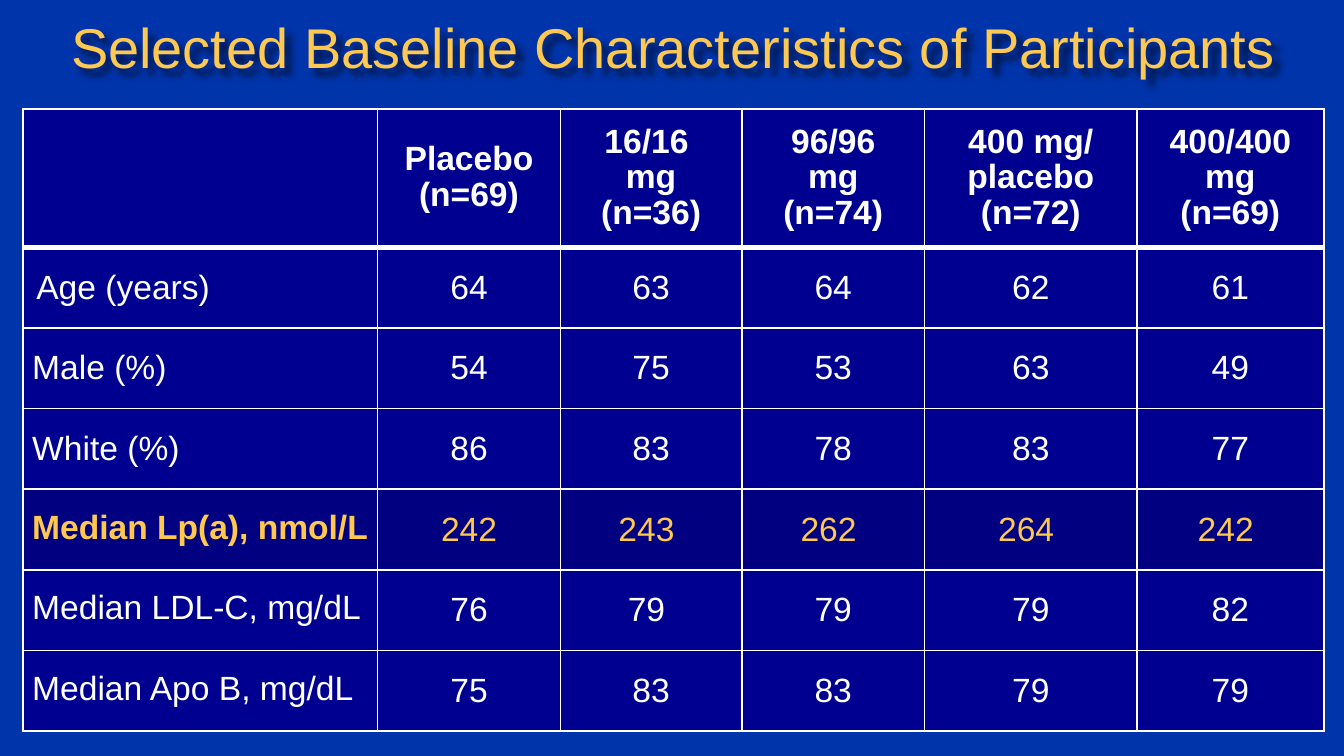
from lxml.etree import SubElement
from pptx import Presentation
from pptx.dml.color import RGBColor
from pptx.enum.text import MSO_ANCHOR as Anchor, PP_ALIGN as Align
from pptx.oxml.ns import qn
from pptx.util import Inches, Pt

COLORS = {
    "background": "0034AA",
    "title": "FFC850",
    "text": "FFFFFF",
    "cell": "000090",
    "highlight": "FFC84F",
    "highlight_cell": "000080",
    "shadow": "000000",
}
FONT = "Arial"
COLUMN_WIDTHS = [2.64, 1.36, 1.35, 1.36, 1.58, 1.39]
HEADER_HEIGHT, ROW_HEIGHT = 1.03, 0.6
HIGHLIGHT_ROW = 4
HEADERS = [
    [],
    ["Placebo", "(n=69)"],
    ["16/16 ", "mg\n(n=36)"],
    ["96/96", "mg\n(n=74)"],
    ["400 mg/\nplacebo\n(n=72)"],
    ["400/400 mg\n(n=69)"],
]
ROWS = [
    ["Age (years)", "64", "63", "64", "62", "61"],
    ["Male (%)", "54", "75", "53", "63", "49"],
    ["White (%)", "86", "83", "78", "83", "77"],
    ["Median Lp(a), nmol/L", "242", "243 ", "262 ", "264 ", "242 "],
    ["Median LDL-C, mg/dL", "76", "79 ", "79", "79", "82"],
    ["Median Apo B, mg/dL", "75", "83", "83", "79", "79"],
]


def add_span(para, text, size, color, bold=False):
    span = para.add_run()
    span.text = text
    span.font.name = FONT
    span.font.size = Pt(size)
    span.font.bold = bold
    span.font.color.rgb = RGBColor.from_string(COLORS[color])


def add_title_shadow(title):
    effects = SubElement(title.element.spPr, qn("a:effectLst"))
    shadow = SubElement(effects, qn("a:outerShdw"), blurRad=str(Pt(4)),
                        dist=str(Pt(4)), dir="2700000", algn="tl", rotWithShape="0")
    color = SubElement(shadow, qn("a:srgbClr"), val=COLORS["shadow"])
    SubElement(color, qn("a:alpha"), val="60000")


def add_title(page, text):
    title = page.shapes.title
    title.left, title.top = Inches(0.01), Inches(0)
    title.width, title.height = Inches(10), Inches(0.69)
    add_title_shadow(title)
    frame = title.text_frame
    frame.vertical_anchor = Anchor.MIDDLE
    frame.word_wrap = True
    para = frame.paragraphs[0]
    para.alignment = Align.CENTER
    add_span(para, text, 30, "title")


def set_borders(cell, widths):
    properties = cell._tc.get_or_add_tcPr()
    for side, width in widths.items():
        line = SubElement(properties, qn(f"a:ln{side}"), w=str(Pt(width)))
        fill = SubElement(line, qn("a:solidFill"))
        SubElement(fill, qn("a:srgbClr"), val=COLORS["text"])


def format_cell(cell, row, column):
    cell.vertical_anchor = Anchor.MIDDLE
    cell.margin_left = Inches(0.1 if (row, column) == (1, 0) else 0.07)
    cell.margin_right = Inches(0.07 if column else 0)
    cell.margin_top = cell.margin_bottom = Inches(0)
    set_borders(cell, {"L": 1, "R": 1, "T": 3 if row == 1 else 1, "B": 3 if row == 0 else 1})
    cell.fill.solid()
    fill = "highlight_cell" if row == HIGHLIGHT_ROW else "cell"
    cell.fill.fore_color.rgb = RGBColor.from_string(COLORS[fill])


def fill_cell(cell, paragraphs, align, spacing, color, bold):
    frame = cell.text_frame
    for index, text in enumerate(paragraphs):
        para = frame.add_paragraph() if index else frame.paragraphs[0]
        para.alignment = align
        para.line_spacing = spacing
        for number, line in enumerate(text.split("\n")):
            if number:
                para.add_line_break()
            add_span(para, line, 18, color, bold)


def add_baseline_table(page):
    height = HEADER_HEIGHT + ROW_HEIGHT * len(ROWS)
    table = page.shapes.add_table(
        len(ROWS) + 1, len(COLUMN_WIDTHS), Inches(0.17), Inches(0.81),
        Inches(sum(COLUMN_WIDTHS)), Inches(height)).table
    table.first_row = table.horz_banding = False
    for column, width in zip(table.columns, COLUMN_WIDTHS):
        column.width = Inches(width)
    for index, row in enumerate(table.rows):
        row.height = Inches(ROW_HEIGHT if index else HEADER_HEIGHT)
    contents = [HEADERS] + [[[text] for text in row] for row in ROWS]
    for row, entries in enumerate(contents):
        color = "highlight" if row == HIGHLIGHT_ROW else "text"
        for column, paragraphs in enumerate(entries):
            cell = table.cell(row, column)
            is_label = row > 0 and column == 0
            bold = row == 0 or (is_label and row == HIGHLIGHT_ROW)
            spacing = 0.95 if row == 0 else 0.85 if is_label and row >= HIGHLIGHT_ROW else 1.0
            format_cell(cell, row, column)
            fill_cell(cell, paragraphs, Align.LEFT if is_label else Align.CENTER,
                      spacing, color, bold)


def main():
    deck = Presentation()
    deck.slide_width = Inches(10)
    deck.slide_height = deck.slide_width * 9 // 16
    page = deck.slides.add_slide(deck.slide_layouts[5])
    page.background.fill.solid()
    page.background.fill.fore_color.rgb = RGBColor.from_string(COLORS["background"])
    add_title(page, "Selected Baseline Characteristics of Participants")
    add_baseline_table(page)
    deck.save("out.pptx")


if __name__ == "__main__":
    main()
